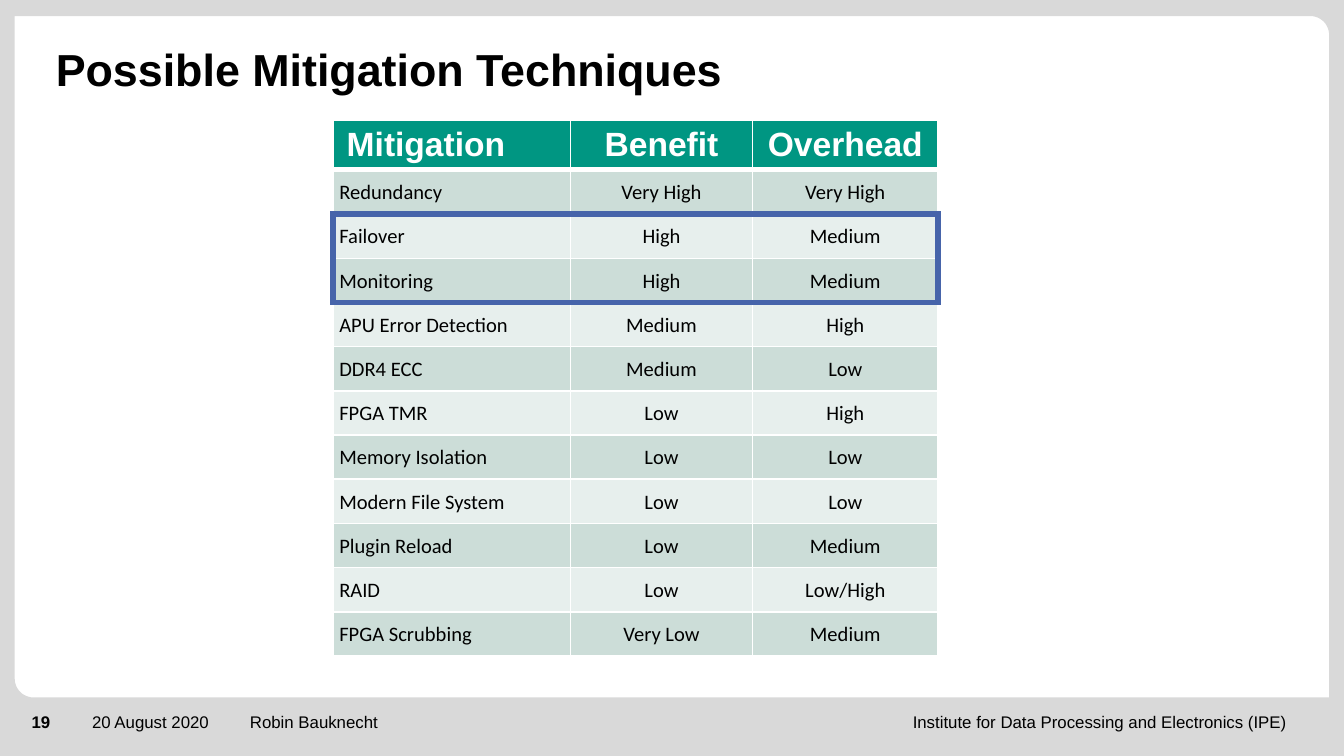
"""Build a slide that ranks mitigation techniques by benefit and overhead."""
from dataclasses import dataclass
from math import cos, pi, sin

from lxml.etree import SubElement
from pptx import Presentation
from pptx.dml.color import RGBColor
from pptx.enum.shapes import MSO_SHAPE as Preset
from pptx.enum.text import MSO_ANCHOR as Anchor, PP_ALIGN as Align
from pptx.oxml.ns import qn
from pptx.util import Inches, Pt


@dataclass(frozen=True)
class Theme:
    black: str = "000000"
    white: str = "FFFFFF"
    frame: str = "D9D9D9"
    header: str = "009682"
    bands: tuple[str, str] = ("CCDDD8", "E7EFED")
    highlight: str = "4664AA"
    font: str = "Arial"
    body_font: str = "Calibri"
    title_size: float = 24
    header_size: float = 18
    body_size: float = 11
    footer_size: float = 9


@dataclass(frozen=True)
class Box:
    column: float
    row: float
    columns: float
    rows: float

    def lengths(self) -> tuple[int, ...]:
        return tuple(grid(n) for n in (self.column, self.row, self.columns, self.rows))


@dataclass(frozen=True)
class Label:
    text: str
    box: Box
    size: float
    bold: bool = False
    align: Align = Align.LEFT
    anchor: Anchor = Anchor.TOP


@dataclass(frozen=True)
class Technique:
    name: str
    benefit: str
    overhead: str


THEME = Theme()
GRID_COLUMNS, GRID_ROWS = 100, 56.25
PANEL = Box(1.1, 1.2, 97.8, 50.7)
CORNER = 1.4
TABLE_COLUMN, TABLE_ROW = 24.8, 8.95
COLUMN_SPANS = (17.65, 13.55, 13.8)
HEADER_ROWS, BODY_ROWS = 3.7, 3.29
FIRST_HIGHLIGHTED, HIGHLIGHTED = 1, 2
HEADINGS = ("Mitigation", "Benefit", "Overhead")
TECHNIQUES = (
    Technique("Redundancy", "Very High", "Very High"),
    Technique("Failover", "High", "Medium"),
    Technique("Monitoring", "High", "Medium"),
    Technique("APU Error Detection", "Medium", "High"),
    Technique("DDR4 ECC", "Medium", "Low"),
    Technique("FPGA TMR", "Low", "High"),
    Technique("Memory Isolation", "Low", "Low"),
    Technique("Modern File System", "Low", "Low"),
    Technique("Plugin Reload", "Low", "Medium"),
    Technique("RAID", "Low", "Low/High"),
    Technique("FPGA Scrubbing", "Very Low", "Medium"),
)
LABELS = (
    Label("Robin Bauknecht", Box(18.6, 52.95, 40.3, 3), THEME.footer_size),
    Label("Institute for Data Processing and Electronics (IPE)",
          Box(60.2, 52.95, 35.5, 3), THEME.footer_size, align=Align.RIGHT),
    Label("20 August 2020", Box(6.85, 52.95, 11.2, 3), THEME.footer_size),
    Label("19", Box(2.35, 52.95, 3.6, 2.4), THEME.footer_size, bold=True),
    Label("Possible Mitigation Techniques", Box(4.15, 0.85, 75.1, 6.3),
          THEME.title_size, bold=True, anchor=Anchor.BOTTOM),
)


def grid(cells: float) -> int:
    return Inches(cells / 10)


def add_run(paragraph, text: str, size: float, color: str, font: str, bold: bool) -> None:
    run = paragraph.add_run()
    run.text = text
    run.font.size, run.font.name, run.font.bold = Pt(size), font, bold
    run.font.color.rgb = RGBColor.from_string(color)


def corner_arc(x: float, y: float, start: float, end: float) -> list[tuple[int, int]]:
    steps = 12
    angles = (start + (end - start) * step / steps for step in range(steps + 1))
    return [(grid(x + CORNER * cos(a)), grid(y + CORNER * sin(a))) for a in angles]


def draw_frame(slide) -> None:
    left, top = PANEL.column, PANEL.row
    right, bottom = left + PANEL.columns, top + PANEL.rows
    width, height = grid(GRID_COLUMNS), grid(GRID_ROWS)
    builder = slide.shapes.build_freeform(0, 0)
    builder.add_line_segments([(width, 0), (width, height), (0, height)])
    builder.move_to(grid(left), grid(top))
    builder.add_line_segments([
        *corner_arc(left + CORNER, bottom - CORNER, pi, pi / 2),
        (grid(right), grid(bottom)),
        *corner_arc(right - CORNER, top + CORNER, 0, -pi / 2),
    ])
    shape = builder.convert_to_shape()
    shape.shadow.inherit = False
    shape.fill.solid()
    shape.fill.fore_color.rgb = RGBColor.from_string(THEME.frame)
    shape.line.fill.background()


def draw_label(slide, label: Label) -> None:
    frame = slide.shapes.add_textbox(*label.box.lengths()).text_frame
    frame.word_wrap, frame.vertical_anchor = True, label.anchor
    frame.margin_left = frame.margin_top = frame.margin_right = frame.margin_bottom = 0
    paragraph = frame.paragraphs[0]
    paragraph.alignment = label.align
    if label.size == THEME.title_size:
        paragraph.line_spacing = 0.9
    add_run(paragraph, label.text, label.size, THEME.black, THEME.font, label.bold)


def set_borders(cell, widths: dict[str, float]) -> None:
    properties = cell._tc.get_or_add_tcPr()
    for side, width in widths.items():
        line = SubElement(properties, qn(f"a:ln{side}"), w=str(Pt(width)))
        fill = SubElement(line, qn("a:solidFill"))
        SubElement(fill, qn("a:srgbClr"), val=THEME.white)


def draw_cell(cell, text: str, row: int, column: int) -> None:
    heading = row == 0
    set_borders(cell, {"L": 1, "R": 1, "T": 3 if row == 1 else 1, "B": 3 if heading else 1})
    cell.fill.solid()
    fill = THEME.header if heading else THEME.bands[(row - 1) % 2]
    cell.fill.fore_color.rgb = RGBColor.from_string(fill)
    cell.vertical_anchor = Anchor.MIDDLE
    if heading:
        cell.margin_top = cell.margin_bottom = Inches(0.03)
    else:
        cell.margin_left = cell.margin_top = cell.margin_right = Inches(0.01)
        cell.margin_bottom = 0
    paragraph = cell.text_frame.paragraphs[0]
    paragraph.alignment = Align.CENTER if column else Align.LEFT
    if heading:
        add_run(paragraph, text, THEME.header_size, THEME.white, THEME.font, True)
    else:
        add_run(paragraph, text, THEME.body_size, THEME.black, THEME.body_font, False)


def draw_table(slide) -> None:
    records = [HEADINGS, *((f" {t.name}", t.benefit, t.overhead) for t in TECHNIQUES)]
    box = Box(TABLE_COLUMN, TABLE_ROW, sum(COLUMN_SPANS),
              HEADER_ROWS + BODY_ROWS * len(TECHNIQUES))
    table = slide.shapes.add_table(len(records), len(HEADINGS), *box.lengths()).table
    table.first_row = table.horz_banding = False
    for column, span in zip(table.columns, COLUMN_SPANS):
        column.width = grid(span)
    for row, record in enumerate(records):
        table.rows[row].height = grid(BODY_ROWS if row else HEADER_ROWS)
        for column, text in enumerate(record):
            draw_cell(table.cell(row, column), text, row, column)


def draw_highlight(slide) -> None:
    top = TABLE_ROW + HEADER_ROWS + BODY_ROWS * FIRST_HIGHLIGHTED
    box = Box(TABLE_COLUMN, top, sum(COLUMN_SPANS), BODY_ROWS * HIGHLIGHTED)
    shape = slide.shapes.add_shape(Preset.RECTANGLE, *box.lengths())
    shape.shadow.inherit = False
    shape.fill.background()
    shape.line.color.rgb = RGBColor.from_string(THEME.highlight)
    shape.line.width = Pt(3)
    SubElement(shape.line._get_or_add_ln(), qn("a:miter"), lim="800000")


def main() -> None:
    presentation = Presentation()
    presentation.slide_width, presentation.slide_height = grid(GRID_COLUMNS), grid(GRID_ROWS)
    slide = presentation.slides.add_slide(presentation.slide_layouts[6])
    draw_frame(slide)
    for label in LABELS:
        draw_label(slide, label)
    draw_table(slide)
    draw_highlight(slide)
    presentation.save("out.pptx")


if __name__ == "__main__":
    main()
